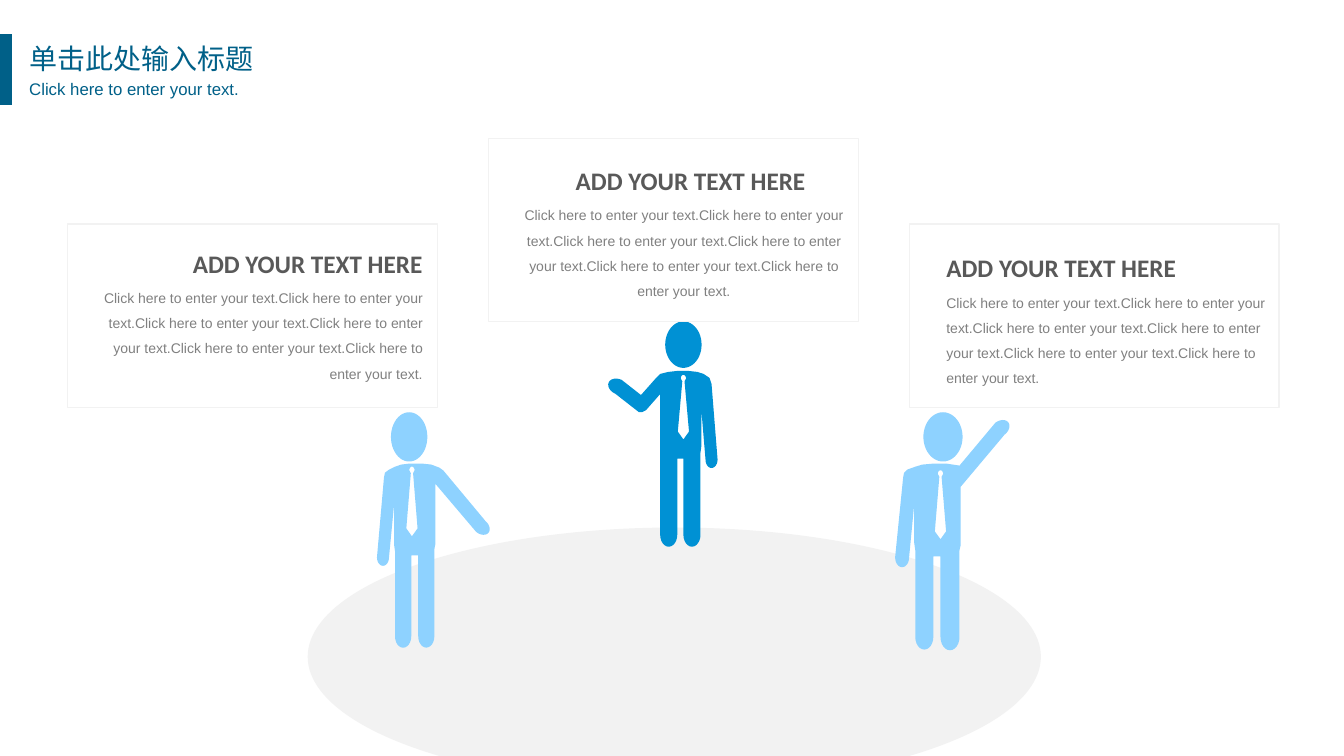
from dataclasses import dataclass
from math import cos, pi, sin

from lxml.etree import SubElement
from pptx import Presentation
from pptx.dml.color import RGBColor
from pptx.enum.shapes import MSO_SHAPE
from pptx.enum.text import PP_ALIGN
from pptx.oxml.ns import qn
from pptx.util import Pt

TEAL, BLUE, SKY, PALE = "006088", "0091D4", "8ED2FF", "F2F2F2"
HEADING, BODY = "595959", "808080"
CARD_W, CARD_H = 264.2, 131
HEADING_W, HEADING_H, BODY_H = 178.6, 28.8, 79.2
BODY_DROP = 23.6
CARD_TITLE = "ADD YOUR TEXT HERE"
PROMPT = "Click here to enter your text."
CAP_DEPTH = 0.7

Point = tuple[float, float]


@dataclass
class Cap:
    """Rounded limb end, from the previous outline point to (x, y)."""
    x: float
    y: float


@dataclass
class Person:
    color: str
    head: tuple[float, float, float, float]  # centre x, centre y, radius x, radius y
    tie: tuple[float, float, float]  # centre x, top, length
    body: list


@dataclass
class Card:
    left: float
    top: float
    heading_left: float
    heading_top: float
    body_left: float
    body_width: float
    align: PP_ALIGN


PEOPLE = [
    Person(SKY, (292.3, 312.1, 13, 17.6), (294.3, 333.4, 49.7), [
        (292.3, 331.2), (301.7, 331.2), (308.2, 331.9), (313.9, 334.1), (316.8, 336.2),
        (346.7, 372.1), Cap(340.2, 380), (311, 345.6), (311, 388.8), (310.3, 392.4),
        (310.3, 454.6), Cap(298.8, 454.6), (298.8, 396.7), (293.8, 396.7),
        (293.8, 454.6), Cap(282.2, 454.6), (282.2, 393.8), (281.5, 388.8), (281.5, 360.7),
        (277.9, 398.2), Cap(269.3, 398.2), (274.3, 341.3), (275, 337.7), (277.9, 335.5),
        (282.2, 333.4), (286.6, 331.9)]),
    Person(SKY, (673.6, 312.1, 14, 17.6), (671.8, 336, 49.2), [
        (666.7, 331.2), (676.1, 331.2), (685.4, 332.6),
        (711, 302), Cap(717.5, 310.6), (686.2, 347.8), (686.2, 389.5), (685.4, 393.1),
        (685.4, 455), Cap(671.8, 455), (671.8, 397.4), (666.7, 397.4),
        (666.7, 455), Cap(653.8, 455), (653.8, 393.1), (653, 387.4), (653, 360.7),
        (649.4, 398.2), Cap(639.4, 398.2), (645.1, 341.3), (645.8, 337.7), (648, 335.5),
        (653.8, 333.4), (658.8, 331.9)]),
    Person(BLUE, (488.2, 246.2, 13, 16.6), (488.2, 267.8, 46.1), [
        (483.8, 265), (491.8, 265), (498.2, 265.7), (502.6, 267.1), (506.9, 270),
        (508.3, 274.3), (512.6, 328.3), Cap(504, 328.3), (501.1, 293.8), (501.1, 318.2),
        (500.4, 323.3), (500.4, 382), Cap(488.2, 382), (488.2, 327.6), (483.8, 327.6),
        (483.8, 382), Cap(471.6, 382), (471.6, 281.5), (461.5, 293), (458.6, 294.5),
        (456.5, 294.5), (439.6, 281.3), Cap(444, 271.3), (457.9, 282.2), (468.7, 270),
        (471.6, 267.1), (477.4, 265.7)]),
]

CARDS = [
    Card(48.3, 160, 130.3, 173.6, 58.3, 250.6, PP_ALIGN.RIGHT),
    Card(349, 98.8, 404, 114.6, 365, 247, PP_ALIGN.CENTER),
    Card(649.5, 160, 668.9, 176.9, 668.9, 250.6, PP_ALIGN.LEFT),
]


def rgb(color: str) -> RGBColor:
    return RGBColor.from_string(color)


def paint(s, fill: str | None = None, line: str | None = None) -> None:
    s.shadow.inherit = False
    if fill:
        s.fill.solid()
        s.fill.fore_color.rgb = rgb(fill)
    else:
        s.fill.background()
    if line:
        s.line.color.rgb = rgb(line)
        s.line.width = Pt(1)
    else:
        s.line.fill.background()


def add_preset(shapes, kind: MSO_SHAPE, box: tuple, fill=None, line=None) -> None:
    paint(shapes.add_shape(kind, *map(Pt, box)), fill, line)


def add_text(shapes, box: tuple, text: str, size: float, font: str, color: str,
             align=PP_ALIGN.LEFT, bold=False, spacing=1.0, wrap=True, inset=None) -> None:
    tf = shapes.add_textbox(*map(Pt, box)).text_frame
    tf.word_wrap = wrap
    if inset is not None:
        tf.margin_left = tf.margin_top = tf.margin_right = tf.margin_bottom = Pt(inset)
    p = tf.paragraphs[0]
    p.text, p.alignment, p.line_spacing = text, align, spacing
    p.font.size, p.font.bold, p.font.name = Pt(size), bold, font
    p.font.color.rgb = rgb(color)
    SubElement(p.font._rPr, qn("a:ea")).set("typeface", font)


def trace(outline: list) -> list[Point]:
    """Turn a clockwise outline into plain points, rounding off every Cap."""
    points: list[Point] = []
    for step in outline:
        if not isinstance(step, Cap):
            points.append(step)
            continue
        x, y = points[-1]
        dx, dy = step.x - x, step.y - y
        for i in range(1, 13):
            along, out = (1 - cos(pi * i / 12)) / 2, CAP_DEPTH * sin(pi * i / 12)
            points.append((x + dx * along + dy * out, y + dy * along - dx * out))
    return points


def head_outline(cx: float, cy: float, rx: float, ry: float) -> list[Point]:
    angles = [2 * pi * i / 48 for i in range(48)]
    return [(cx + rx * cos(a), cy + ry * sin(a)) for a in angles]


def tie_outline(cx: float, top: float, length: float) -> list[Point]:
    """Tie wound against the body, so that it cuts a hole."""
    knot, hem = top + 4.6, top + length - 5.6
    return trace([(cx - 0.8, knot), (cx - 1.9, top + 2.6), Cap(cx + 1.9, top + 2.6),
                  (cx + 0.8, knot), (cx + 4, hem), (cx, top + length), (cx - 4, hem)])[::-1]


def add_person(shapes, person: Person) -> None:
    contours = [[(Pt(x), Pt(y)) for x, y in contour] for contour in (
        trace(person.body), tie_outline(*person.tie), head_outline(*person.head))]
    builder = shapes.build_freeform(*contours[0][0])
    builder.add_line_segments(contours[0][1:])
    for contour in contours[1:]:
        builder.move_to(*contour[0])
        builder.add_line_segments(contour[1:])
    paint(builder.convert_to_shape(), person.color)


def add_card(shapes, card: Card) -> None:
    add_text(shapes, (card.heading_left, card.heading_top, HEADING_W, HEADING_H),
             CARD_TITLE, 18, "Calibri", HEADING, card.align, bold=True, wrap=False)
    add_text(shapes, (card.body_left, card.heading_top + BODY_DROP, card.body_width, BODY_H),
             PROMPT * 6, 10, "Arial", BODY, card.align, spacing=1.5)
    add_preset(shapes, MSO_SHAPE.RECTANGLE, (card.left, card.top, CARD_W, CARD_H), line=PALE)


def main() -> None:
    prs = Presentation()
    prs.slide_width, prs.slide_height = Pt(960), Pt(540)
    shapes = prs.slides.add_slide(prs.slide_layouts[6]).shapes
    add_preset(shapes, MSO_SHAPE.OVAL, (220.3, 377.3, 522.7, 183.6), PALE, PALE)
    for person in PEOPLE:
        add_person(shapes, person)
    for card in CARDS:
        add_card(shapes, card)
    add_text(shapes, (13.7, 25.9, 186.5, 33.1), "单击此处输入标题", 20, "Noto Sans CJK SC", TEAL)
    add_text(shapes, (18, 50.4, 177.8, 23), PROMPT, 12, "Arial", TEAL,
             PP_ALIGN.JUSTIFY, spacing=1.2, inset=2.9)
    add_preset(shapes, MSO_SHAPE.RECTANGLE, (0, 24.5, 8.6, 50.4), TEAL)
    prs.save("out.pptx")


if __name__ == "__main__":
    main()
